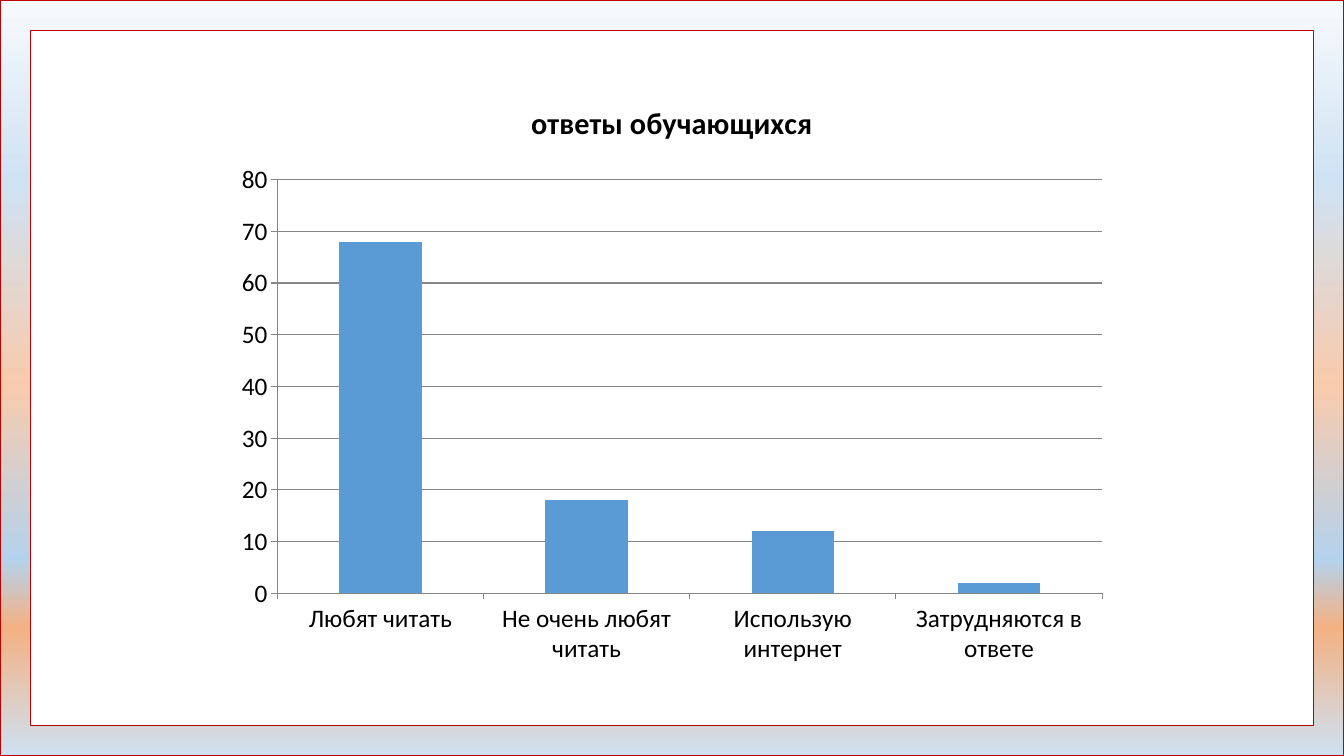
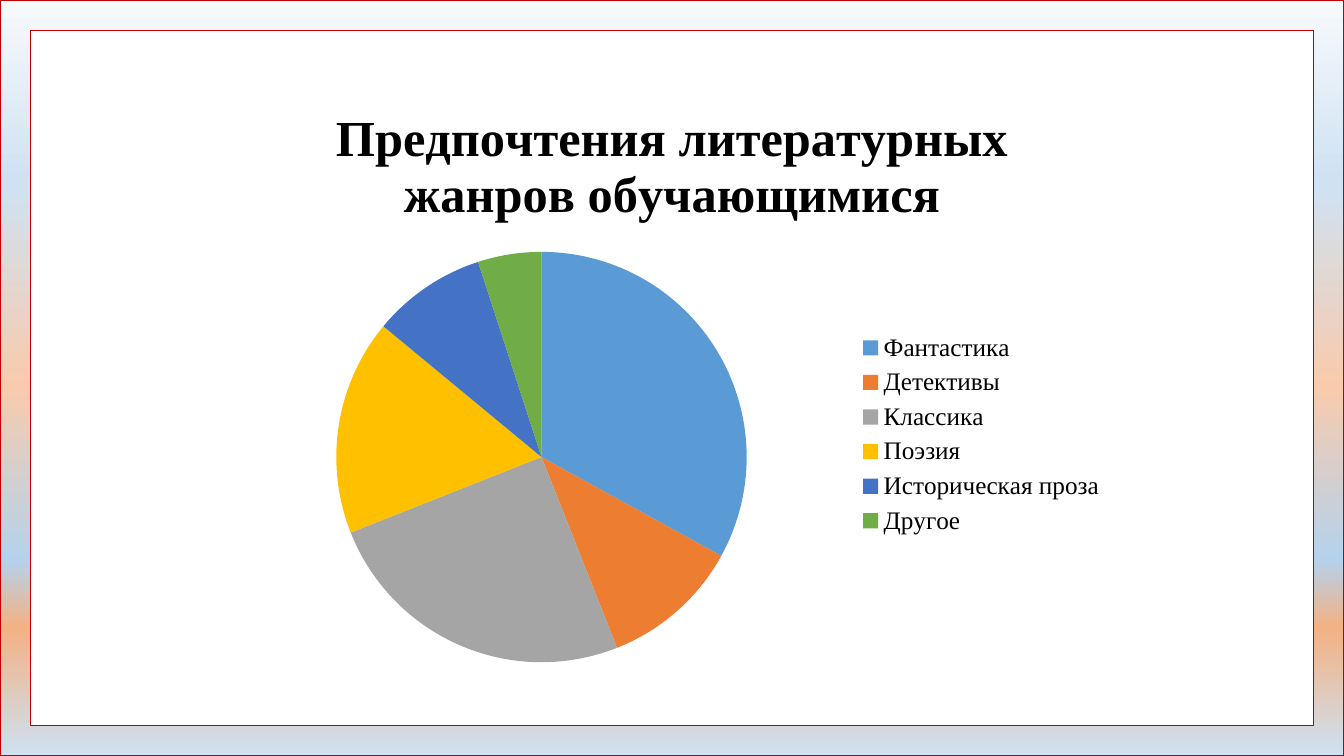
import dataclasses
import typing

import lxml.etree
import pptx
import pptx.chart.chart
import pptx.chart.data
import pptx.dml.color
import pptx.enum.chart
import pptx.enum.shapes
import pptx.oxml.ns
import pptx.slide
import pptx.util

RGBColor = pptx.dml.color.RGBColor
ChartType = pptx.enum.chart.XL_CHART_TYPE
qn = pptx.oxml.ns.qn

PIXEL = 6350
SLIDE_WIDTH, SLIDE_HEIGHT = 1920, 1080
CHART_BOX = (320, 113, 1280, 853)
LEGEND_LAYOUT = {"x": 0.71, "y": 0.415, "w": 0.27, "h": 0.36}
FRAME_THICKNESS = 0.04
BODY_FONT = "Calibri"
SERIF_FONT = "Times New Roman"

BLACK = RGBColor(0x00, 0x00, 0x00)
WHITE = RGBColor(0xFF, 0xFF, 0xFF)
RED = RGBColor(0xC0, 0x00, 0x00)
GRID_GRAY = RGBColor(0x86, 0x86, 0x86)
BLUE = RGBColor(0x5B, 0x9B, 0xD5)
ORANGE = RGBColor(0xED, 0x7D, 0x31)
GRAY = RGBColor(0xA5, 0xA5, 0xA5)
GOLD = RGBColor(0xFF, 0xC0, 0x00)
INDIGO = RGBColor(0x44, 0x72, 0xC4)
GREEN = RGBColor(0x70, 0xAD, 0x47)

FRAME_STOPS = (
    (0, RGBColor(0xF7, 0xFA, 0xFD)),
    (24, RGBColor(0xCF, 0xE2, 0xF3)),
    (51, RGBColor(0xF8, 0xCB, 0xAD)),
    (74, RGBColor(0xB5, 0xD2, 0xEC)),
    (83, RGBColor(0xF4, 0xB1, 0x83)),
    (100, RGBColor(0xCE, 0xE1, 0xF2)),
)


@dataclasses.dataclass(frozen=True)
class Survey:
    title: str
    title_font: str
    title_size: float
    series_name: str
    chart_type: ChartType
    answers: dict[str, int]
    colors: tuple[RGBColor, ...]


SURVEYS = (
    Survey(
        title="ответы обучающихся",
        title_font=BODY_FONT,
        title_size=21.6,
        series_name="ответы обучающихся",
        chart_type=ChartType.COLUMN_STACKED,
        answers={
            "Любят читать": 68,
            "Не очень любят читать": 18,
            "Использую интернет": 12,
            "Затрудняются в ответе": 2,
        },
        colors=(BLUE,),
    ),
    Survey(
        title="Предпочтения литературных жанров обучающимися",
        title_font=SERIF_FONT,
        title_size=36,
        series_name="Series 1",
        chart_type=ChartType.PIE,
        answers={
            "Фантастика": 33,
            "Детективы": 11,
            "Классика": 25,
            "Поэзия": 17,
            "Историческая проза": 9,
            "Другое": 5,
        },
        colors=(BLUE, ORANGE, GRAY, GOLD, INDIGO, GREEN),
    ),
)


def px(length: int) -> pptx.util.Emu:
    return pptx.util.Emu(length * PIXEL)


def apply_format(target: typing.Any, values: dict[str, typing.Any]) -> None:
    for name, value in values.items():
        setattr(target, name, value)


def format_font(font: typing.Any, name: str, size: float, bold: bool = False) -> None:
    apply_format(font, {"name": name, "size": pptx.util.Pt(size), "bold": bold})
    font.color.rgb = BLACK


def format_line(line: typing.Any, color: RGBColor, width: float) -> None:
    line.color.rgb = color
    line.width = pptx.util.Pt(width)


def fill_solid(fill: typing.Any, color: RGBColor) -> None:
    fill.solid()
    fill.fore_color.rgb = color


def add_frame(slide: pptx.slide.Slide) -> None:
    frame = slide.shapes.add_shape(
        pptx.enum.shapes.MSO_SHAPE.FRAME, 0, 0, px(SLIDE_WIDTH), px(SLIDE_HEIGHT)
    )
    frame.shadow.inherit = False
    frame.adjustments[0] = FRAME_THICKNESS
    frame.fill.gradient()
    frame.fill.gradient_angle = 270
    stop_list = frame.fill._xPr.find(qn("a:gradFill")).find(qn("a:gsLst"))
    for stop in list(stop_list):
        stop_list.remove(stop)
    for percent, color in FRAME_STOPS:
        stop = lxml.etree.SubElement(stop_list, qn("a:gs"), pos=str(percent * 1000))
        lxml.etree.SubElement(stop, qn("a:srgbClr"), val=str(color))
    format_line(frame.line, RED, 1)


def format_columns(chart: pptx.chart.chart.Chart, survey: Survey) -> None:
    plot = chart.plots[0]
    apply_format(plot, {"gap_width": 150, "overlap": 100, "vary_by_categories": False})
    fill_solid(plot.series[0].format.fill, survey.colors[0])
    for axis in (chart.category_axis, chart.value_axis):
        axis.major_tick_mark = pptx.enum.chart.XL_TICK_MARK.OUTSIDE
        format_line(axis.format.line, GRID_GRAY, 0.75)
        format_font(axis.tick_labels.font, BODY_FONT, 18)
    scale = {"minimum_scale": 0, "maximum_scale": 80, "major_unit": 10}
    apply_format(chart.value_axis, scale | {"has_major_gridlines": True})
    format_line(chart.value_axis.major_gridlines.format.line, GRID_GRAY, 0.75)


def place_legend(legend: typing.Any) -> None:
    element = legend._element
    for old_layout in element.findall(qn("c:layout")):
        element.remove(old_layout)
    layout = lxml.etree.Element(qn("c:layout"))
    manual = lxml.etree.SubElement(layout, qn("c:manualLayout"))
    for mode in ("xMode", "yMode"):
        lxml.etree.SubElement(manual, qn(f"c:{mode}"), val="edge")
    for name, value in LEGEND_LAYOUT.items():
        lxml.etree.SubElement(manual, qn(f"c:{name}"), val=str(value))
    element.find(qn("c:legendPos")).addnext(layout)


def format_pie(chart: pptx.chart.chart.Chart, survey: Survey) -> None:
    plot = chart.plots[0]
    plot.vary_by_categories = True
    for index, color in enumerate(survey.colors):
        fill_solid(plot.series[0].points[index].format.fill, color)
    chart.has_legend = True
    position = pptx.enum.chart.XL_LEGEND_POSITION.RIGHT
    apply_format(chart.legend, {"position": position, "include_in_layout": False})
    format_font(chart.legend.font, SERIF_FONT, 18)
    place_legend(chart.legend)


def add_survey_chart(slide: pptx.slide.Slide, survey: Survey) -> None:
    chart_data = pptx.chart.data.CategoryChartData()
    chart_data.categories = list(survey.answers)
    chart_data.add_series(survey.series_name, list(survey.answers.values()))
    chart = slide.shapes.add_chart(
        survey.chart_type, *map(px, CHART_BOX), chart_data
    ).chart
    format_font(chart.font, BODY_FONT, 18)
    apply_format(chart, {"has_title": True, "has_legend": False})
    chart.chart_title.include_in_layout = False
    paragraph = chart.chart_title.text_frame.paragraphs[0]
    run = paragraph.add_run()
    run.text = survey.title
    for font in (paragraph.font, run.font):
        format_font(font, survey.title_font, survey.title_size, bold=True)
    if survey.chart_type == ChartType.PIE:
        format_pie(chart, survey)
    else:
        format_columns(chart, survey)


def main() -> None:
    presentation = pptx.Presentation()
    size = {"slide_width": px(SLIDE_WIDTH), "slide_height": px(SLIDE_HEIGHT)}
    apply_format(presentation, size)
    blank_layout = presentation.slide_layouts[6]
    fill_solid(presentation.slide_master.background.fill, WHITE)
    for survey in SURVEYS:
        slide = presentation.slides.add_slide(blank_layout)
        add_frame(slide)
        add_survey_chart(slide, survey)
    presentation.save("out.pptx")


if __name__ == "__main__":
    main()
